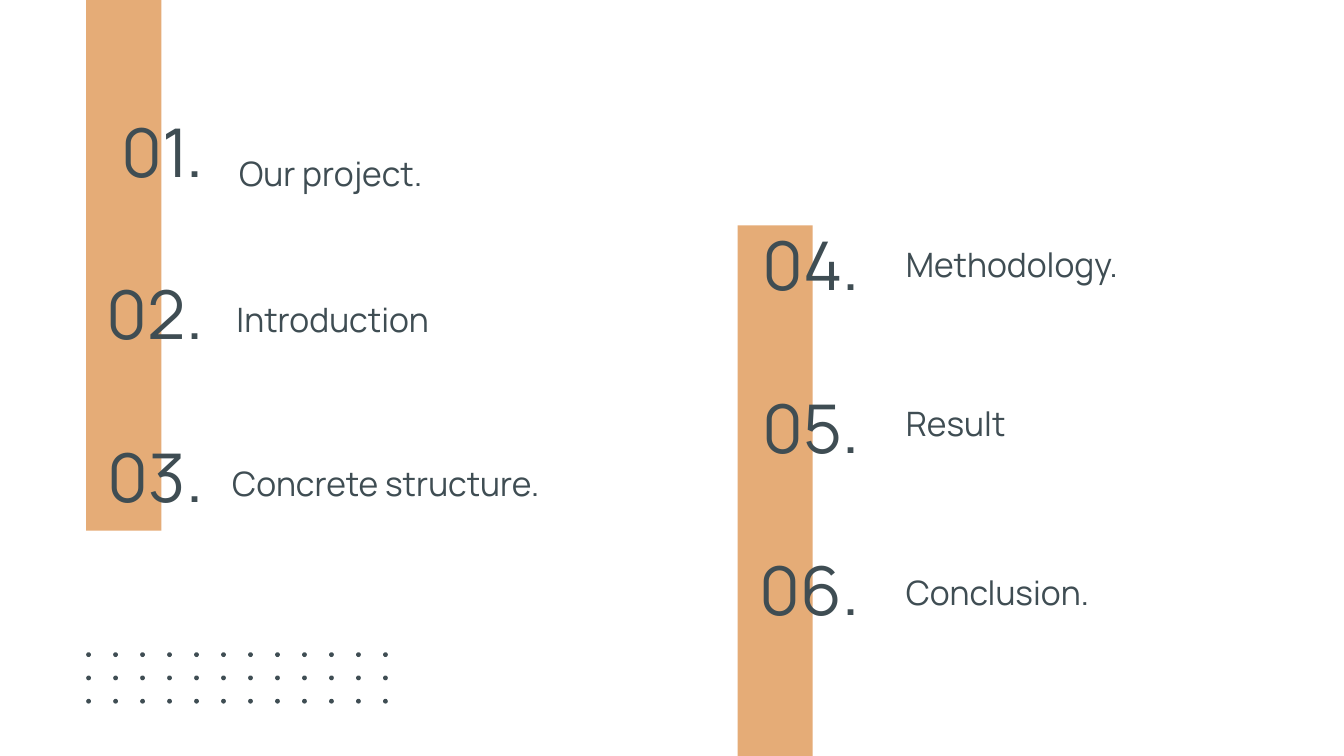
from pptx import Presentation
from pptx.dml.color import RGBColor
from pptx.enum.shapes import MSO_SHAPE
from pptx.enum.text import MSO_ANCHOR, MSO_AUTO_SIZE, PP_ALIGN
from pptx.util import Cm, Pt

SAND = RGBColor(0xE5, 0xAC, 0x77)
SLATE = RGBColor(0x3F, 0x4D, 0x53)
FONT = "Manrope"

# All lengths are in centimetres.
SLIDE_W, SLIDE_H = 25.4, 14.29
BAR_W, BAR_H = 1.42, 10.03
NUMBER_W, NUMBER_H, NUMBER_STEP = 3.66, 1.5, 3.07
LABEL_W, LABEL_H = 7.65, 1.22
DOT_COLS, DOT_ROWS, DOT_SIZE = 12, 3, 0.09
DOT_LEFT, DOT_TOP, DOT_DX, DOT_DY = 1.63, 12.33, 0.51, 0.44

# Each entry: number, label, label left, label top
COLUMNS = [
    {"bar": (1.63, 0), "numbers": (0.43, 2.36), "entries": [
        ("01.", "Our project.", 4.27, 2.64),
        ("02.", "Introduction", 4.22, 5.41),
        ("03.", "Concrete structure.", 4.14, 8.51)]},
    {"bar": (13.94, SLIDE_H - BAR_H), "numbers": (12.83, 4.5), "entries": [
        ("04.", "Methodology.", 16.87, 4.37),
        ("05.", "Result", 16.87, 7.37),
        ("06.", "Conclusion.", 16.87, 10.57)]},
]


def add_filled(s, kind, left, top, width, height, color):
    sp = s.shapes.add_shape(kind, Cm(left), Cm(top), Cm(width), Cm(height))
    sp.shadow.inherit = False
    sp.fill.solid()
    sp.fill.fore_color.rgb = color
    sp.line.fill.background()


def put_text(sp, text, left, top, width, height, size=18,
             align=PP_ALIGN.LEFT, anchor=MSO_ANCHOR.TOP):
    sp.left, sp.top, sp.width, sp.height = Cm(left), Cm(top), Cm(width), Cm(height)
    tf = sp.text_frame
    tf.word_wrap = True
    tf.auto_size = MSO_AUTO_SIZE.NONE
    tf.vertical_anchor = anchor
    tf.margin_left = tf.margin_right = tf.margin_top = tf.margin_bottom = Cm(0.25)
    p = tf.paragraphs[0]
    p.alignment = align
    r = p.add_run()
    r.text = text
    r.font.name = FONT
    r.font.size = Pt(size)
    r.font.color.rgb = SLATE


def main():
    prs = Presentation()
    prs.slide_width, prs.slide_height = Cm(SLIDE_W), Cm(SLIDE_H)
    s = prs.slides.add_slide(prs.slide_layouts[5])

    for column in COLUMNS:
        add_filled(s, MSO_SHAPE.RECTANGLE, *column["bar"], BAR_W, BAR_H, SAND)

    title = s.shapes.title
    for column in COLUMNS:
        left, top = column["numbers"]
        for i, (number, label, label_left, label_top) in enumerate(column["entries"]):
            put_text(s.shapes.add_textbox(0, 0, 0, 0), number,
                     left, top + i * NUMBER_STEP, NUMBER_W, NUMBER_H,
                     size=36, align=PP_ALIGN.RIGHT, anchor=MSO_ANCHOR.BOTTOM)
            # The first label takes the title placeholder.
            sp = title or s.shapes.add_textbox(0, 0, 0, 0)
            title = None
            put_text(sp, label, label_left, label_top, LABEL_W, LABEL_H)

    for row in range(DOT_ROWS):
        for col in range(DOT_COLS):
            add_filled(s, MSO_SHAPE.OVAL, DOT_LEFT + col * DOT_DX,
                       DOT_TOP + row * DOT_DY, DOT_SIZE, DOT_SIZE, SLATE)

    prs.save("out.pptx")


if __name__ == "__main__":
    main()
